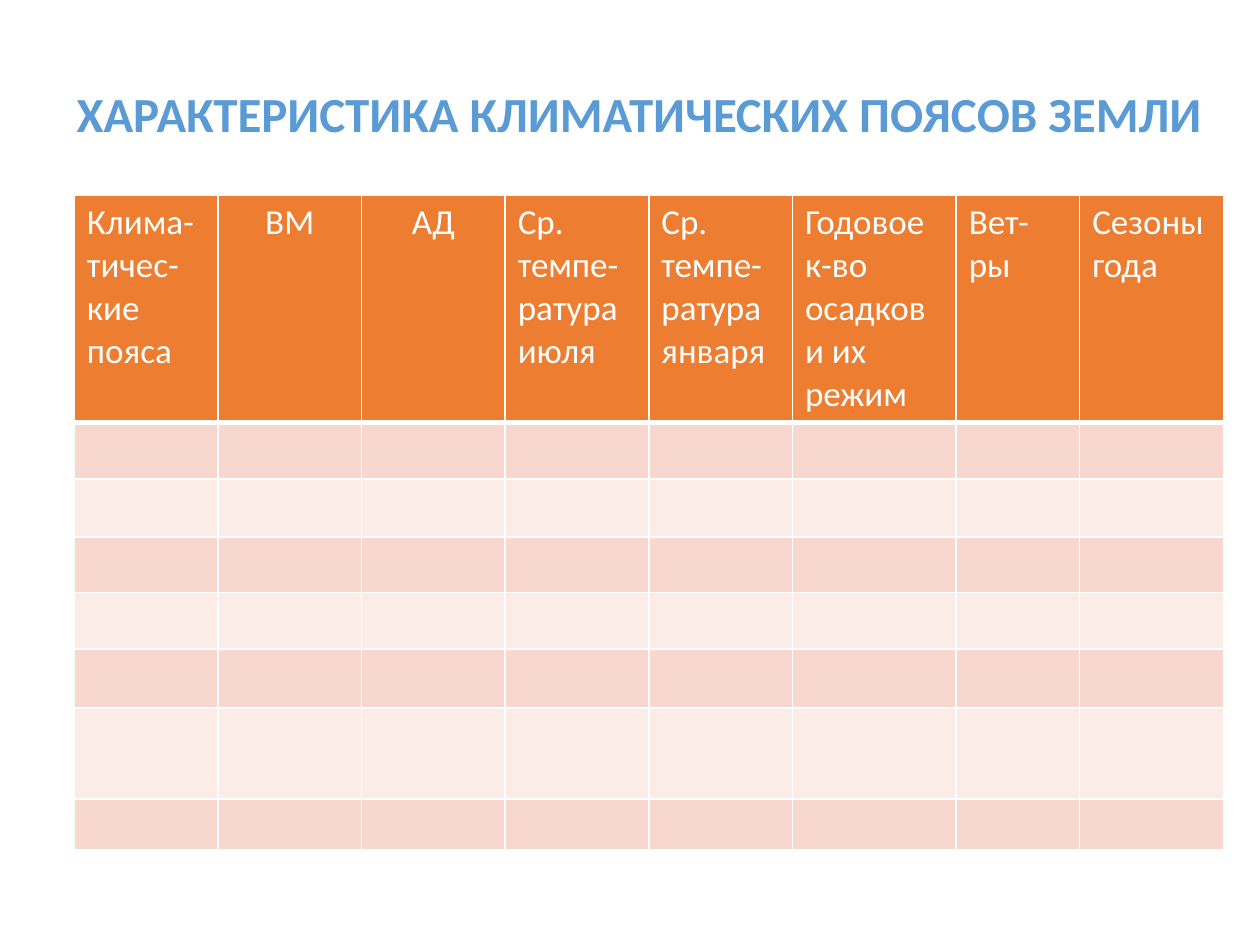
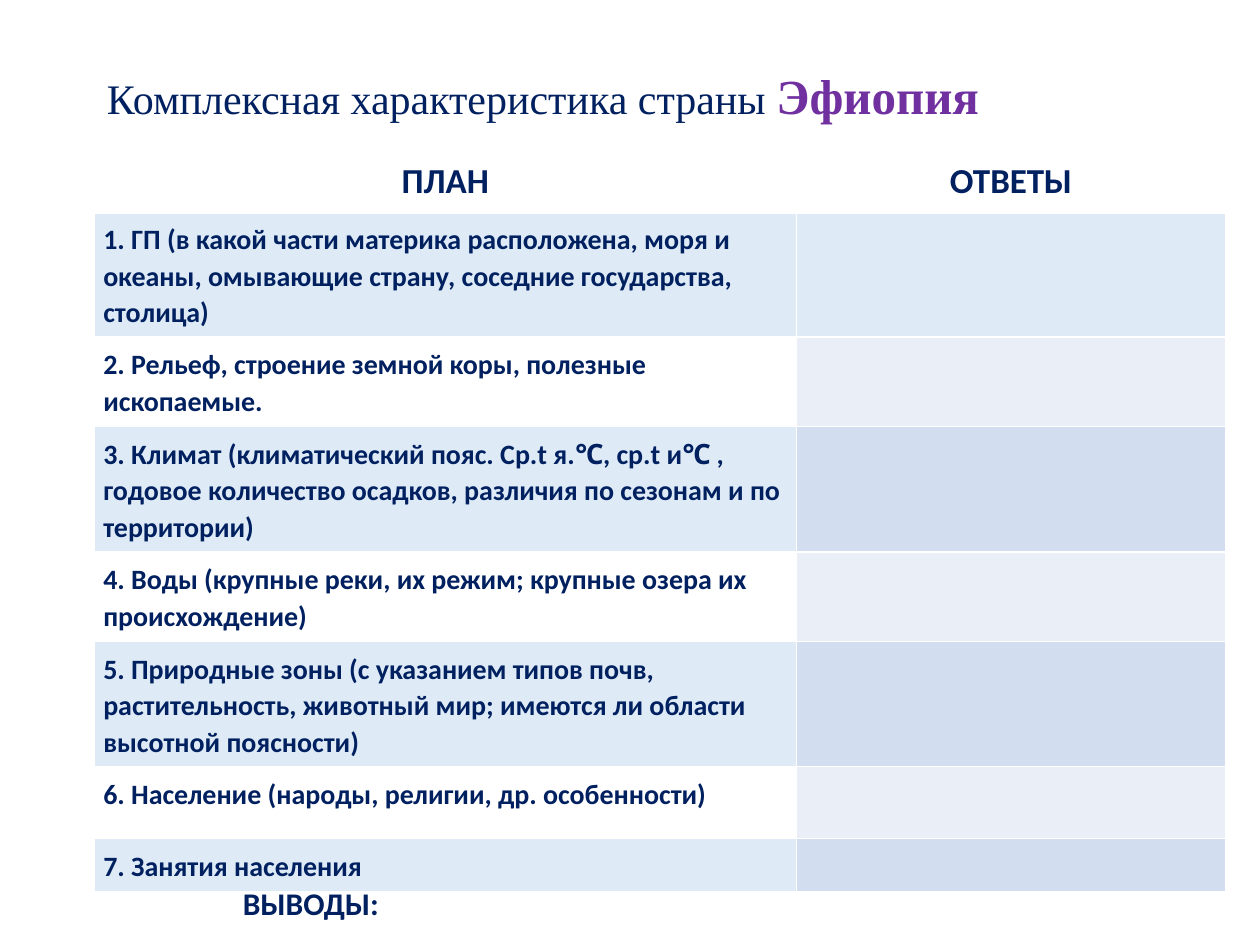
from lxml import etree
from pptx import Presentation
from pptx.dml.color import RGBColor
from pptx.enum.text import MSO_AUTO_SIZE, PP_ALIGN
from pptx.oxml.ns import qn
from pptx.util import Inches, Pt

LEFT, CENTER = PP_ALIGN.LEFT, PP_ALIGN.CENTER
GROW = MSO_AUTO_SIZE.SHAPE_TO_FIT_TEXT
SANS, SERIF = "Calibri", "Times New Roman"
WHITE, NAVY, BLUE, PURPLE = "FFFFFF", "002060", "5B9BD5", "7030A0"
ORANGE, PEACH, BLUSH = "ED7D31", "F8D7CE", "FCECE8"
SKY, MIST, STEEL = "DEEBF7", "EAEFF7", "D2DEEF"
COLS, ROWS = 100, 75  # grid of the slide

ZONES = ["Клима-тичес-кие пояса", "ВМ", "АД", "Ср. темпе-ратура июля",
         "Ср. темпе-ратура января", "Годовое к-во осадков и их режим",
         "Вет-ры", "Сезоны года"]
PLAN = [
    "1. ГП (в какой части материка расположена, моря и океаны, "
    "омывающие страну, соседние государства, столица)",
    "2. Рельеф, строение земной коры, полезные ископаемые.",
    "3. Климат (климатический пояс. Ср.t я.℃, ср.t и℃ , годовое "
    "количество осадков, различия по сезонам и по территории)",
    "4. Воды (крупные реки, их режим; крупные озера их происхождение)",
    "5. Природные зоны (с указанием типов почв, растительность, "
    "животный мир; имеются ли области высотной поясности)",
    "6. Население (народы, религии, др. особенности)",
    "7. Занятия населения",
]


def rgb(code):
    return RGBColor.from_string(code)


def edge(cell, side, width):
    """Draw a white border on one side (L, R, T or B) of a cell."""
    props = cell._tc.get_or_add_tcPr()
    line = etree.SubElement(props, qn("a:ln" + side), w=str(Pt(width)))
    fill = etree.SubElement(line, qn("a:solidFill"))
    etree.SubElement(fill, qn("a:srgbClr"), val=WHITE)


class Deck:
    def __init__(self):
        self.prs = Presentation()
        self.prs.slide_width, self.prs.slide_height = Inches(10), Inches(7.5)
        self.slide = None

    def page(self):
        self.slide = self.prs.slides.add_slide(self.prs.slide_layouts[6])

    def across(self, cols):
        return round(self.prs.slide_width * cols / COLS)

    def down(self, rows):
        return round(self.prs.slide_height * rows / ROWS)

    def area(self, x, y, w, h):
        return self.across(x), self.down(y), self.across(w), self.down(h)

    def style(self, font, size, color, bold=False, face=SANS):
        font.name, font.size, font.bold = face, Pt(size), bold
        font.color.rgb = rgb(color)

    def space(self, para, after):
        para.line_spacing, para.space_after = 1.07, Pt(after)

    def box(self, place, wrap=False):
        """Add an empty text box and return its first paragraph."""
        frame = self.slide.shapes.add_textbox(*self.area(*place)).text_frame
        frame.word_wrap, frame.auto_size = wrap, GROW
        return frame.paragraphs[0]

    def label(self, place, text, size, color):
        para = self.box(place)
        para.text = text
        self.style(para.font, size, color, True)

    def title(self, place, parts):
        """Add a serif title of (text, size, color, bold) parts."""
        para = self.box(place, True)
        self.space(para, 6.8)
        for text, *look in parts:
            run = para.add_run()
            run.text = text
            self.style(run.font, *look, face=SERIF)

    def table(self, x, y, widths, heights, fill):
        """Add a table; fill(row, col) gives the colour of each cell."""
        place = self.area(x, y, sum(widths), sum(heights))
        grid = self.slide.shapes.add_table(
            len(heights), len(widths), *place).table
        grid.first_row = grid.horz_banding = False
        for col, width in zip(grid.columns, widths):
            col.width = self.across(width)
        for row, height in zip(grid.rows, heights):
            row.height = self.down(height)
        for r in range(len(heights)):
            for c in range(len(widths)):
                cell = grid.cell(r, c)
                for side in "LRTB":
                    edge(cell, side, 3 if r == 0 and side == "B" else 1)
                cell.fill.solid()
                cell.fill.fore_color.rgb = rgb(fill(r, c))
        return grid

    def put(self, cell, text, size, color, bold=False, align=LEFT):
        """Set the text of a cell and return its paragraph."""
        para = cell.text_frame.paragraphs[0]
        para.text, para.alignment = text, align
        self.style(para.font, size, color, bold)
        return para

    def entry(self, cell, text, size, align=LEFT):
        """Put a bold plan entry with its own insets and spacing."""
        cell.margin_left = cell.margin_right = self.across(0.7)
        cell.margin_top = cell.margin_bottom = self.down(0.7)
        self.space(self.put(cell, text, size, NAVY, True, align), 8)


def zone_fill(row, col):
    return ORANGE if row == 0 else PEACH if row % 2 else BLUSH


def plan_fill(row, col):
    if row == 0:
        return WHITE
    if col == 0:
        return SKY if row % 2 else WHITE
    if row == 1:
        return SKY
    return STEEL if row % 2 else MIST


def zones(deck):
    deck.page()
    grid = deck.table(5.9, 15.5, [11.4] * 5 + [13, 9.8, 11.4],
                      [17.7, 4.5, 4.6, 4.4, 4.5, 4.7, 7.2, 4], zone_fill)
    for c, text in enumerate(ZONES):
        align = CENTER if c in (1, 2) else LEFT
        deck.put(grid.cell(0, c), text, 20, WHITE, align=align)
    deck.label((5.1, 6.1, 92.3, 5.7),
               "ХАРАКТЕРИСТИКА КЛИМАТИЧЕСКИХ ПОЯСОВ ЗЕМЛИ", 28, BLUE)


def country(deck):
    deck.page()
    deck.title((7.5, 4.4, 87.2, 6.1),
               [("Комплексная характеристика страны ", 24, NAVY, False),
                ("Эфиопия", 28, PURPLE, True)])
    grid = deck.table(7.5, 11.8, [55.7, 34.1],
                      [5, 9.8, 7, 9.9, 7.1, 9.8, 5.7, 4.2], plan_fill)
    for c, text in enumerate(["ПЛАН", "ОТВЕТЫ"]):
        deck.entry(grid.cell(0, c), text, 20, CENTER)
    for r, text in enumerate(PLAN, 1):
        deck.entry(grid.cell(r, 0), text, 16)
    deck.label((18.3, 69.7, 12.9, 4), "ВЫВОДЫ:", 18, NAVY)


def main():
    deck = Deck()
    zones(deck)
    country(deck)
    deck.prs.save("out.pptx")


if __name__ == "__main__":
    main()
